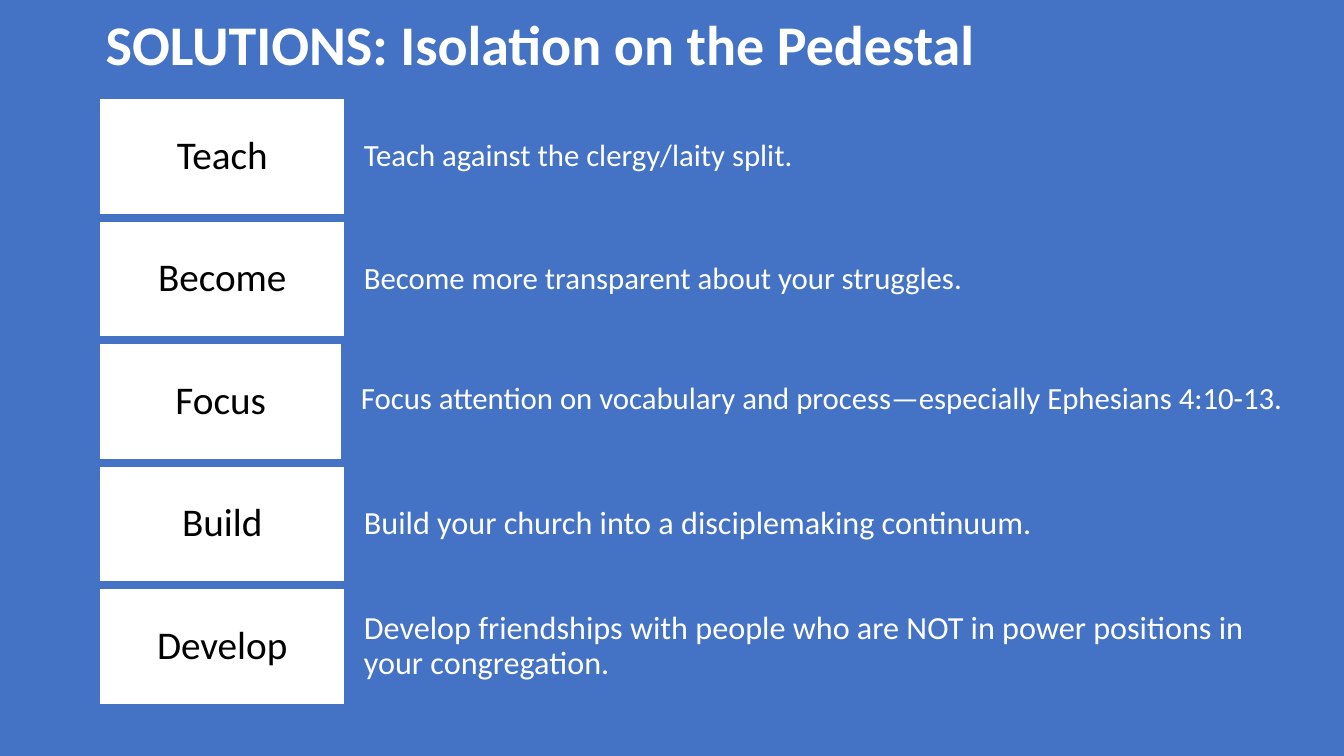
from pptx import Presentation
from pptx.dml.color import RGBColor
from pptx.enum.shapes import MSO_SHAPE as Shape
from pptx.enum.text import MSO_ANCHOR as Anchor, PP_ALIGN as Align
from pptx.util import Inches, Pt

TITLE = "SOLUTIONS: Isolation on the Pedestal"
SOLUTIONS = [
    ("Teach", "Teach against the clergy/laity split.", 22, 2.43, 0),
    ("Become", "Become more transparent about your struggles.", 22, 2.43, 0),
    ("Focus", "Focus attention on vocabulary and process—especially Ephesians 4:10-13.", 22, 2.4, -0.02),
    ("Build", "Build your church into a disciplemaking continuum.", 23, 2.43, 0),
    ("Develop", "Develop friendships with people who are NOT in power positions in your congregation.", 23, 2.43, 0),
]
BLUE, WHITE, BLACK = "4472C4", "FFFFFF", "000000"
LEFT, RIGHT, TOP = 0.99, 13.16, 0.98
ROW_PITCH, ROW_HEIGHT = 1.215, 1.15


def color(value):
    return RGBColor.from_string(value)


def write(box, text, size, ink, margins, align=Align.LEFT, bold=False):
    frame = box.text_frame
    frame.word_wrap = True
    frame.vertical_anchor = Anchor.MIDDLE
    frame.margin_left = frame.margin_right = Inches(margins[0])
    frame.margin_top = frame.margin_bottom = Inches(margins[1])
    para = frame.paragraphs[0]
    para.alignment = align
    para.line_spacing = 0.9
    span = para.add_run()
    span.text = text
    span.font.name = "Calibri"
    span.font.size = Pt(size)
    span.font.bold = bold
    span.font.color.rgb = color(ink)


def add_panel(page, left, top, width, fill):
    panel = page.shapes.add_shape(
        Shape.RECTANGLE, Inches(left), Inches(top), Inches(width), Inches(ROW_HEIGHT))
    panel.shadow.inherit = False
    panel.fill.solid()
    panel.fill.fore_color.rgb = color(fill)
    panel.line.color.rgb = color(BLUE)
    panel.line.width = Pt(1)
    return panel


def main():
    """Build the slide of five solutions and save it."""
    deck = Presentation()
    deck.slide_width, deck.slide_height = Inches(13.333), Inches(7.5)
    page = deck.slides.add_slide(deck.slide_layouts[6])
    page.background.fill.solid()
    page.background.fill.fore_color.rgb = color(BLUE)

    heading = page.shapes.add_textbox(Inches(0.95), Inches(0.2), Inches(11.5), Inches(0.54))
    write(heading, TITLE, 40, WHITE, (0.1, 0.05), bold=True)

    for row, (verb, detail, size, width, lift) in enumerate(SOLUTIONS):
        top = TOP + row * ROW_PITCH
        split = LEFT + width
        detail_panel = add_panel(page, split, top + lift, RIGHT - split, BLUE)
        write(detail_panel, detail, size, WHITE, (0.19, 0.29))
        verb_panel = add_panel(page, LEFT, top, width, WHITE)
        write(verb_panel, verb, 28, BLACK, (0.13, 0.11), Align.CENTER)

    deck.save("out.pptx")


if __name__ == "__main__":
    main()
